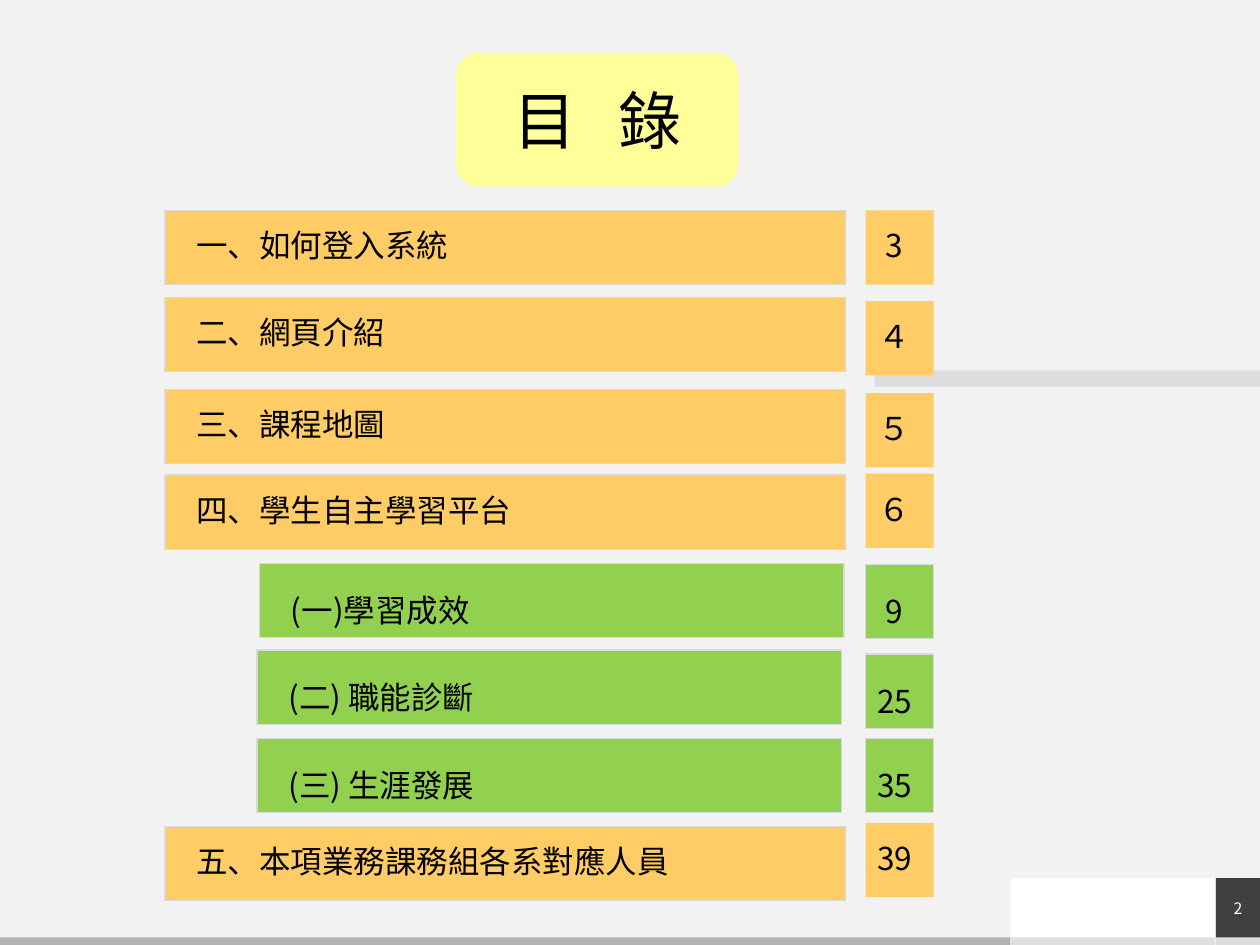
from pptx import Presentation
from pptx.dml.color import RGBColor
from pptx.enum.shapes import MSO_SHAPE
from pptx.enum.text import MSO_ANCHOR, PP_ALIGN
from pptx.util import Inches, Pt

RECT = MSO_SHAPE.RECTANGLE
ROUNDED = MSO_SHAPE.ROUNDED_RECTANGLE
MIDDLE = MSO_ANCHOR.MIDDLE
LEFT, CENTER = PP_ALIGN.LEFT, PP_ALIGN.CENTER

COLORS = {
    "background": "F2F2F2", "white": "FFFFFF", "black": "000000",
    "orange": "FFCC66", "green": "92D050", "yellow": "FFFF99",
    "border": "D9D9D9", "dark": "404040", "band": "DDDDDD",
    "footer": "B2B2B2", "footer_light": "DFDFDF",
}
ENTRY_FONT = "Noto Sans CJK SC"
ROW_HEIGHT = 0.59
PAGE_LEFT, PAGE_WIDTH = 6.87, 0.54
CHAPTER_LEFT, CHAPTER_WIDTH = 1.31, 5.4
SECTION_WIDTH = 4.64

BANDS = [
    (8.02, 6.97, 1.62, 0.47, "white"),
    (0, 6.97, 8.02, 0.47, "background"),
    (9.65, 7.44, 0.35, 0.06, "band"),
    (0, 7.44, 8.02, 0.06, "footer"),
    (8.02, 7.44, 1.62, 0.06, "footer_light"),
    (6.94, 2.94, 3.06, 0.13, "band"),
]
CHAPTERS = [
    ("　一、如何登入系統", 1.67, "3", 1.67),
    ("　二、網頁介紹", 2.36, "４", 2.39),
    ("　三、課程地圖", 3.09, "５", 3.12),
    ("　四、學生自主學習平台", 3.77, "６", 3.76),
    ("　五、本項業務課務組各系對應人員", 6.56, "39", 6.53),
]
SECTIONS = [
    ("　(一)學習成效", 2.06, 4.47, "9", 4.48),
    ("　(二) 職能診斷", 2.04, 5.16, "25", 5.19),
    ("　(三) 生涯發展", 2.04, 5.86, "35", 5.86),
]


def rgb(name):
    """Return the named palette colour."""
    return RGBColor.from_string(COLORS[name])


def add_block(slide, left, top, width, height, fill, bordered=False, kind=RECT):
    """Add a filled shape, with a thin border if wanted."""
    block = slide.shapes.add_shape(
        kind, Inches(left), Inches(top), Inches(width), Inches(height))
    block.shadow.inherit = False
    block.fill.solid()
    block.fill.fore_color.rgb = rgb(fill)
    if bordered:
        block.line.color.rgb = rgb("border")
        block.line.width = Pt(0.75)
    else:
        block.line.fill.background()
    return block


def write(block, text, size, font, color="black", align=CENTER, spacing=None):
    """Write one vertically centred paragraph into a block."""
    frame = block.text_frame
    frame.word_wrap = True
    frame.vertical_anchor = MIDDLE
    paragraph = frame.paragraphs[0]
    paragraph.text = text
    paragraph.alignment = align
    if spacing:
        paragraph.line_spacing = spacing
    paragraph.font.size = Pt(size)
    paragraph.font.name = font
    paragraph.font.color.rgb = rgb(color)


def set_margins(block, right=0):
    """Remove the text margins, except for the right one given."""
    frame = block.text_frame
    frame.margin_left = frame.margin_top = frame.margin_bottom = 0
    frame.margin_right = Inches(right)


def add_cell(slide, text, left, top, width, fill, bordered, align, spacing):
    """Add one heading or page cell of the contents list."""
    cell = add_block(slide, left, top, width, ROW_HEIGHT, fill, bordered)
    set_margins(cell, 0.08)
    write(cell, text, 18, ENTRY_FONT, align=align, spacing=spacing)


def add_chapter(slide, heading, top, page, page_top):
    """Add a chapter heading with its page number."""
    add_cell(slide, heading, CHAPTER_LEFT, top, CHAPTER_WIDTH, "orange", True, LEFT, 0.9)
    add_cell(slide, page, PAGE_LEFT, page_top, PAGE_WIDTH, "orange", False, CENTER, 0.9)


def add_section(slide, heading, left, top, page, page_top):
    """Add an indented section heading with its page number."""
    add_cell(slide, heading, left, top, SECTION_WIDTH, "green", True, LEFT, 1.5)
    add_cell(slide, page, PAGE_LEFT, page_top, PAGE_WIDTH, "green", True, CENTER, 1.5)


def add_title(slide):
    """Add the rounded title block."""
    title = add_block(slide, 3.62, 0.42, 2.24, 1.06, "yellow", kind=ROUNDED)
    write(title, "目   錄", 36, "Arial")


def add_slide_number(slide):
    """Add the slide number in the lower right corner."""
    number = add_block(slide, 9.65, 6.97, 0.35, 0.47, "dark")
    set_margins(number)
    write(number, "2", 9, "Noto Sans CJK TC", "white")


def main():
    """Build the contents slide and save it."""
    prs = Presentation()
    prs.slide_width, prs.slide_height = Inches(10), Inches(7.5)
    slide = prs.slides.add_slide(prs.slide_layouts[6])
    slide.background.fill.solid()
    slide.background.fill.fore_color.rgb = rgb("background")
    for band in BANDS:
        add_block(slide, *band)
    add_slide_number(slide)
    add_title(slide)
    for chapter in CHAPTERS:
        add_chapter(slide, *chapter)
    for section in SECTIONS:
        add_section(slide, *section)
    prs.save("out.pptx")


if __name__ == "__main__":
    main()
